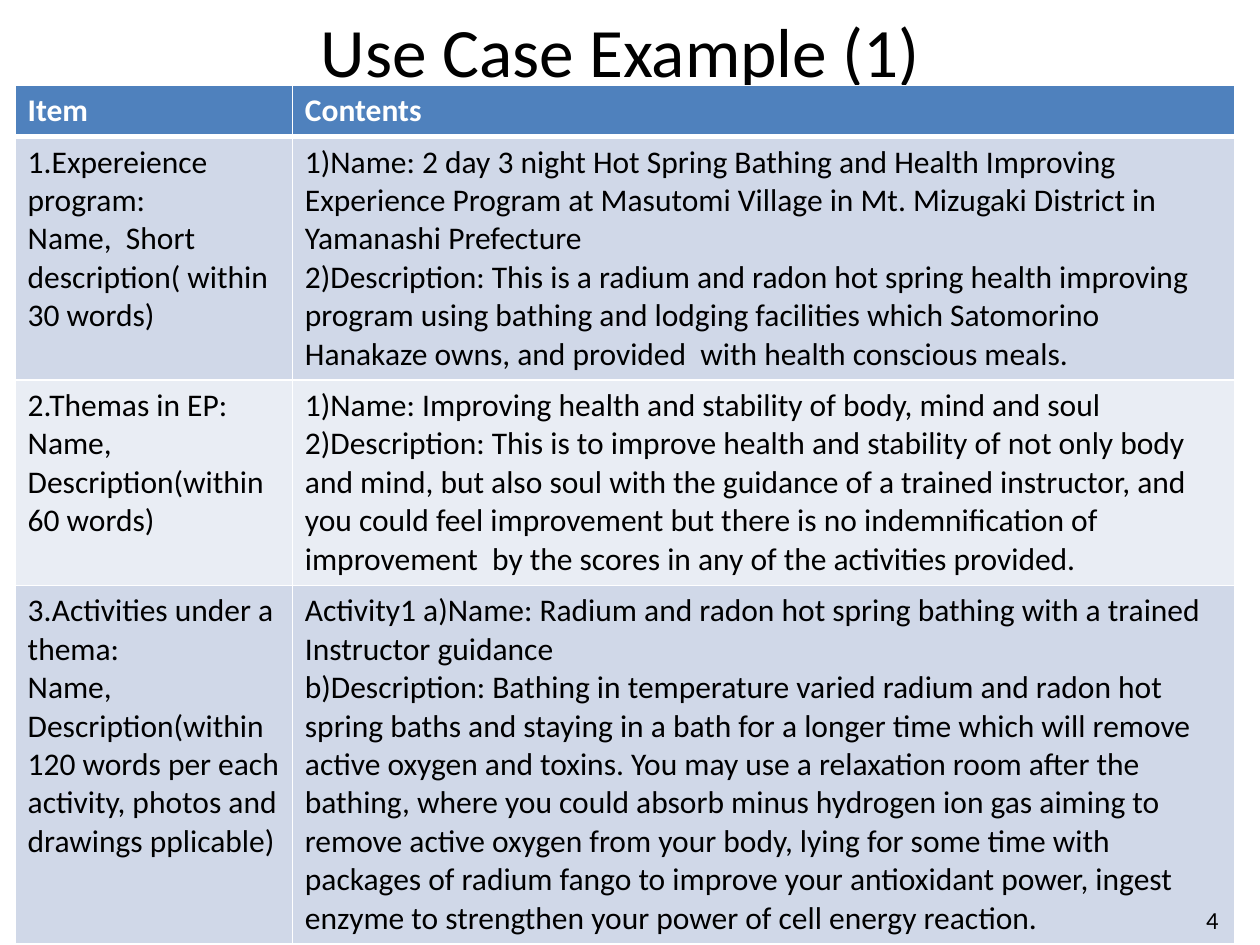
import lxml.etree
import pptx
import pptx.dml.color
import pptx.enum.text
import pptx.oxml.ns
import pptx.util

Inches = pptx.util.Inches
Pt = pptx.util.Pt
Align = pptx.enum.text.PP_ALIGN
Anchor = pptx.enum.text.MSO_ANCHOR

COLORS = {
    "text": "000000",
    "header": "4F81BD",
    "header_text": "FFFFFF",
    "odd_row": "D0D8E8",
    "even_row": "E9EDF4",
    "border": "FFFFFF",
}

HEADER = (["Item"], ["Contents"])
USE_CASE = [
    (
        ["1.Expereience program:", "Name,  Short description( within 30 words)"],
        [
            "1)Name: 2 day 3 night Hot Spring Bathing and Health Improving",
            "Experience Program at Masutomi Village in Mt. Mizugaki District in "
            "Yamanashi Prefecture",
            "2)Description: This is a radium and radon hot spring health improving "
            "program using bathing and lodging facilities which Satomorino Hanakaze "
            "owns, and provided  with health conscious meals.",
        ],
    ),
    (
        ["2.Themas in EP:", "Name, Description(within 60 words)"],
        [
            "1)Name: Improving health and stability of body, mind and soul",
            "2)Description: This is to improve health and stability of not only body "
            "and mind, but also soul with the guidance of a trained instructor, and "
            "you could feel improvement but there is no indemnification of "
            "improvement  by the scores in any of the activities provided.",
        ],
    ),
    (
        [
            "3.Activities under a thema:",
            "Name, Description(within 120 words per each activity, photos and "
            "drawings pplicable)",
        ],
        [
            "Activity1 a)Name: Radium and radon hot spring bathing with a trained",
            "Instructor guidance",
            "b)Description: Bathing in temperature varied radium and radon hot spring "
            "baths and staying in a bath for a longer time which will remove active "
            "oxygen and toxins. You may use a relaxation room after the bathing, where "
            "you could absorb minus hydrogen ion gas aiming to remove active oxygen "
            "from your body, lying for some time with packages of radium fango to "
            "improve your antioxidant power, ingest enzyme to strengthen your power of "
            "cell energy reaction.",
        ],
    ),
]


class SlideBuilder:
    """Holds the text style and the slide being filled."""

    font = "Calibri"

    def __init__(self, slide):
        self.slide = slide

    def add_lines(self, frame, lines, size, color="text", bold=False, align=Align.LEFT):
        """Put each line in its own paragraph, reusing the first one."""
        for index, line in enumerate(lines):
            paragraph = frame.add_paragraph() if index else frame.paragraphs[0]
            paragraph.alignment = align
            run = paragraph.add_run()
            run.text = line
            run.font.name = self.font
            run.font.size = Pt(size)
            run.font.bold = bold
            run.font.color.rgb = pptx.dml.color.RGBColor.from_string(COLORS[color])

    def title(self, heading, left, top, width, height):
        title = self.slide.shapes.title
        title.left, title.top = Inches(left), Inches(top)
        title.width, title.height = Inches(width), Inches(height)
        title.text_frame.auto_size = pptx.enum.text.MSO_AUTO_SIZE.NONE
        title.text_frame.vertical_anchor = Anchor.MIDDLE
        self.add_lines(title.text_frame, [heading], 39.6, align=Align.CENTER)

    def border(self, cell, side, width):
        properties = cell._tc.get_or_add_tcPr()
        qn = pptx.oxml.ns.qn
        line = lxml.etree.SubElement(properties, qn(f"a:ln{side}"), w=str(Pt(width)))
        fill = lxml.etree.SubElement(line, qn("a:solidFill"))
        lxml.etree.SubElement(fill, qn("a:srgbClr"), val=COLORS["border"])

    def cell(self, cell, lines, row_number):
        is_header = row_number == 0
        widths = {
            "L": 1,
            "R": 1,
            "T": 3 if row_number == 1 else 1,
            "B": 3 if is_header else 1,
        }
        for side, width in widths.items():
            self.border(cell, side, width)
        band = "odd_row" if row_number % 2 else "even_row"
        cell.fill.solid()
        cell.fill.fore_color.rgb = pptx.dml.color.RGBColor.from_string(
            COLORS["header" if is_header else band]
        )
        color = "header_text" if is_header else "text"
        self.add_lines(cell.text_frame, lines, 18, color, bold=is_header)

    def table(self, rows, left, top, column_widths, row_heights):
        table = self.slide.shapes.add_table(
            len(rows), len(column_widths), Inches(left), Inches(top),
            Inches(sum(column_widths)), Inches(sum(row_heights)),
        ).table
        for column, width in zip(table.columns, column_widths):
            column.width = Inches(width)
        for row_number, (row, height) in enumerate(zip(rows, row_heights)):
            table.rows[row_number].height = Inches(height)
            for column_number, lines in enumerate(row):
                self.cell(table.cell(row_number, column_number), lines, row_number)

    def page_number(self, number, left, top, width, height):
        box = self.slide.shapes.add_textbox(
            Inches(left), Inches(top), Inches(width), Inches(height)
        )
        box.text_frame.word_wrap = True
        box.text_frame.vertical_anchor = Anchor.MIDDLE
        self.add_lines(box.text_frame, [number], 14, align=Align.RIGHT)


def main():
    deck = pptx.Presentation()
    deck.slide_width, deck.slide_height = Inches(10), Inches(7.5)
    title_only = deck.slide_layouts[5]
    builder = SlideBuilder(deck.slides.add_slide(title_only))
    builder.title("Use Case Example (1)", 0.43, 0.05, 8.99, 0.69)
    builder.table(
        [HEADER, *USE_CASE], 0.12, 0.68, [2.2, 7.48], [0.4, 1.93, 1.63, 2.84]
    )
    builder.page_number("4", 7.44, 7.1, 2.33, 0.4)
    deck.save("out.pptx")


if __name__ == "__main__":
    main()
